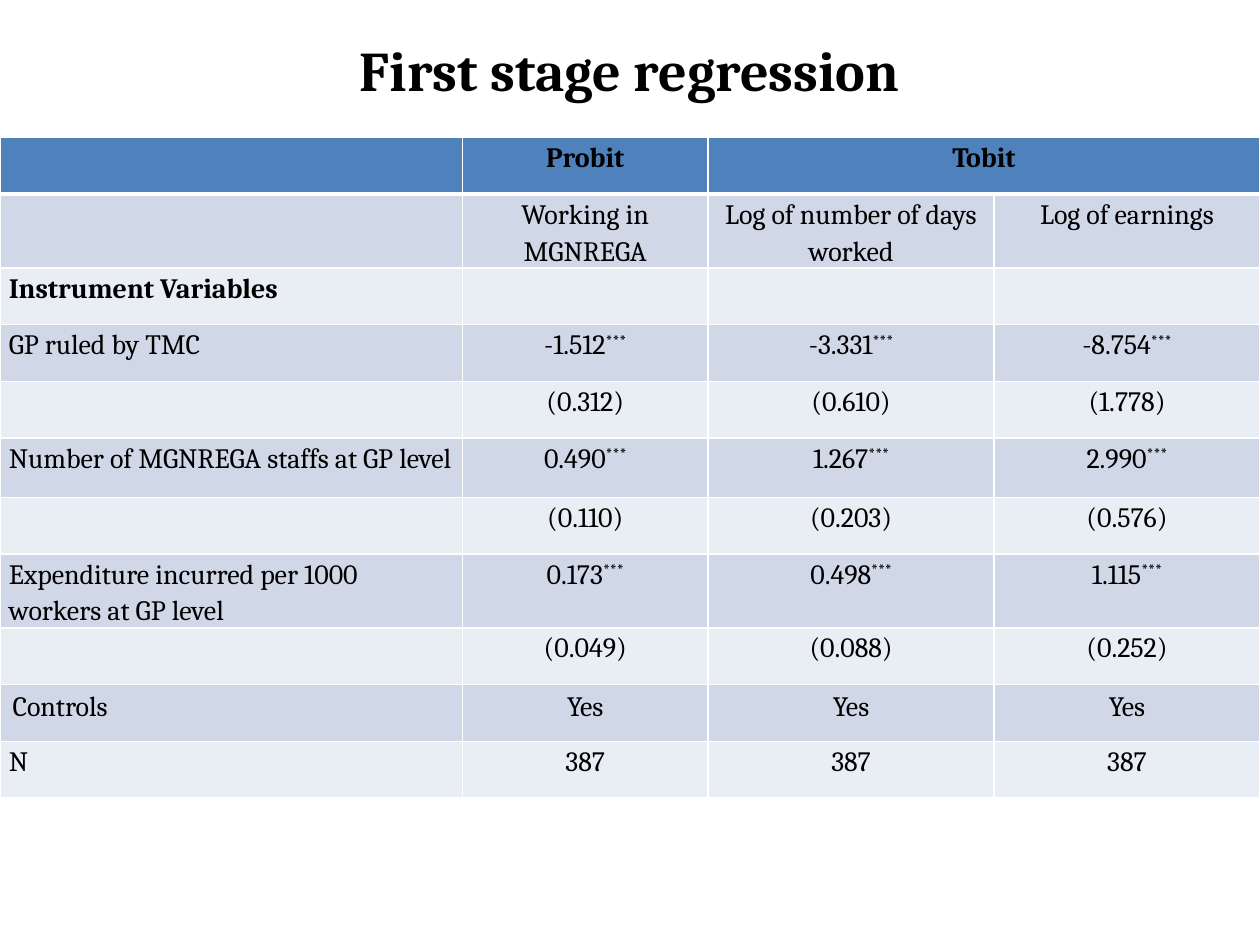
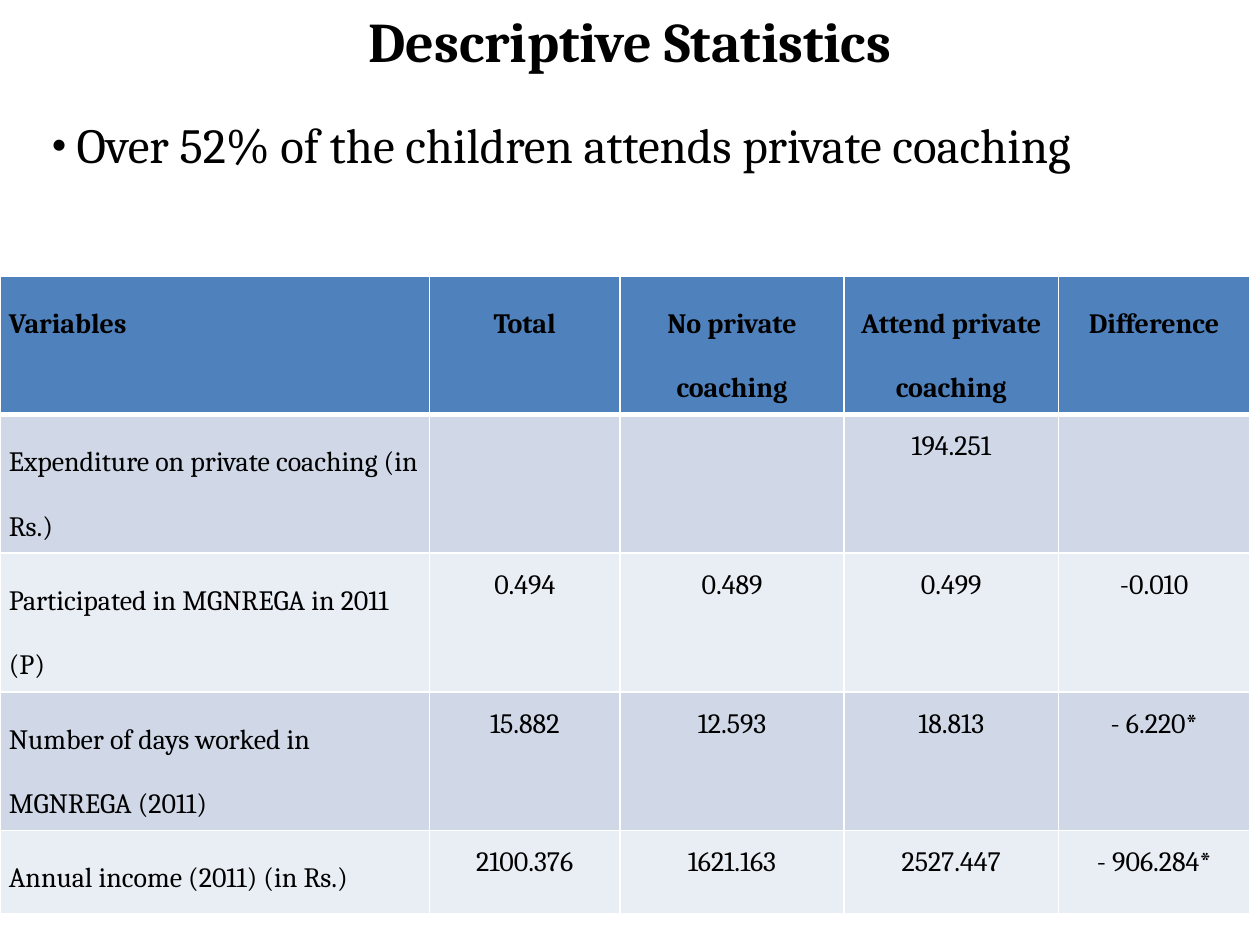
from lxml import etree
from pptx import Presentation
from pptx.dml.color import RGBColor
from pptx.enum.text import MSO_ANCHOR as Anchor, PP_ALIGN as Align
from pptx.oxml.ns import qn
from pptx.util import Inches, Pt

BLACK = RGBColor(0x00, 0x00, 0x00)
HEADER_BLUE = RGBColor(0x4F, 0x81, 0xBD)
BAND_DARK = RGBColor(0xD0, 0xD8, 0xE8)
BAND_LIGHT = RGBColor(0xE9, 0xED, 0xF4)
FONT = "Cambria"
TITLE_ONLY = 5
SUPERSCRIPT = "30000"

STATISTICS_BULLET = "Over 52% of the children attends private coaching"

REGRESSION_ROWS = [
    ["", "Probit", "Tobit", ""],
    ["", "Working in MGNREGA", "Log of number of days worked", "Log of earnings"],
    ["Instrument Variables", "", "", ""],
    ["GP ruled by TMC", "-1.512***", "-3.331***", "-8.754***"],
    ["", "(0.312)", "(0.610)", "(1.778)"],
    ["Number of MGNREGA staffs at GP level", "0.490***", "1.267***", "2.990***"],
    ["", "(0.110)", "(0.203)", "(0.576)"],
    ["Expenditure incurred per 1000 workers at GP level",
     "0.173***", "0.498***", "1.115***"],
    ["", "(0.049)", "(0.088)", "(0.252)"],
    ["Controls", "Yes", "Yes", "Yes"],
    ["N", "387", "387", "387"],
]
STATISTICS_ROWS = [
    ["Variables", "Total", "No private coaching", "Attend private coaching", "Difference"],
    ["Expenditure on private coaching (in Rs.)", "", "", "194.251", ""],
    ["Participated in MGNREGA in 2011 (P)", "0.494", "0.489", "0.499", "-0.010"],
    ["Number of days worked in MGNREGA (2011)", "15.882", "12.593", "18.813", "- 6.220*"],
    ["Annual income (2011) (in Rs.)", "2100.376", "1621.163", "2527.447", "- 906.284*"],
]

SLIDES = [
    {"title": "First stage regression", "title_at": (0.5, -0.08, 9, 1.25),
     "table_at": (0, 1.09), "rows": REGRESSION_ROWS,
     "widths": [3.67, 1.95, 2.27, 2.11],
     "heights": [0.45, 0.58, 0.45, 0.45, 0.45, 0.47, 0.45, 0.58, 0.45, 0.45, 0.45],
     "label_spacing": 1.15, "value_spacing": 1.15,
     "bold_labels": ["Instrument Variables"], "padded_labels": ["Controls"],
     "merge": ((0, 2), (0, 3))},
    {"title": "Descriptive Statistics", "title_at": (0, -0.23, 10, 1.09),
     "table_at": (0, 2.19), "rows": STATISTICS_ROWS,
     "widths": [3.41, 1.51, 1.78, 1.7, 1.52],
     "heights": [1.1, 1.1, 1.1, 1.1, 0.66],
     "label_spacing": 2.0, "value_spacing": 1.5,
     "bold_labels": [], "padded_labels": [],
     "merge": None, "bullet": STATISTICS_BULLET},
]


def add_span(para, text, size, bold=False):
    span = para.add_run()
    span.text = text
    for name, value in {"name": FONT, "size": Pt(size), "bold": bold}.items():
        setattr(span.font, name, value)
    span.font.color.rgb = BLACK
    return span


def set_borders(cell, row):
    """Draw white cell borders, with a thick rule below the header row."""
    points = {"lnL": 1, "lnR": 1, "lnT": 3 if row == 1 else 1, "lnB": 3 if row == 0 else 1}
    properties = cell._tc.get_or_add_tcPr()
    for index, (side, width) in enumerate(points.items()):
        line = etree.Element(qn(f"a:{side}"), w=str(Pt(width)))
        fill = etree.SubElement(line, qn("a:solidFill"))
        etree.SubElement(fill, qn("a:srgbClr"), val="FFFFFF")
        properties.insert(index, line)


deck = Presentation()
deck.slide_width, deck.slide_height = Inches(10), Inches(7.5)

for content in SLIDES:
    page = deck.slides.add_slide(deck.slide_layouts[TITLE_ONLY])
    title = page.shapes.title
    for side, length in zip(("left", "top", "width", "height"), content["title_at"]):
        setattr(title, side, Inches(length))
    title.text_frame.vertical_anchor = Anchor.MIDDLE
    heading = title.text_frame.paragraphs[0]
    heading.alignment = Align.CENTER
    add_span(heading, content["title"], 32, bold=True)

    rows, widths, heights = content["rows"], content["widths"], content["heights"]
    left, top = content["table_at"]
    table = page.shapes.add_table(
        len(rows), len(widths), Inches(left), Inches(top),
        Inches(sum(widths)), Inches(sum(heights))).table
    for column, width in zip(table.columns, widths):
        column.width = Inches(width)
    for table_row, height in zip(table.rows, heights):
        table_row.height = Inches(height)

    for row, texts in enumerate(rows):
        padded = texts[0] in content["padded_labels"]
        for column, text in enumerate(texts):
            cell = table.cell(row, column)
            side_margin, end_margin = (0.1, 0.05) if padded else (0.07, 0)
            cell.margin_left = cell.margin_right = Inches(side_margin)
            cell.margin_top = cell.margin_bottom = Inches(end_margin)
            cell.fill.solid()
            cell.fill.fore_color.rgb = (
                HEADER_BLUE if row == 0 else BAND_DARK if row % 2 else BAND_LIGHT)
            set_borders(cell, row)
            if not text:
                continue
            para = cell.text_frame.paragraphs[0]
            para.alignment = Align.CENTER if column else Align.LEFT
            is_label = row == 0 or column == 0
            spacing = content["label_spacing" if is_label else "value_spacing"]
            para.line_spacing = 1.0 if padded else spacing
            value, stars, _ = text.partition("***")
            add_span(para, value, 16, bold=row == 0 or text in content["bold_labels"])
            if stars:
                span = add_span(para, stars, 16)
                span._r.get_or_add_rPr().set("baseline", SUPERSCRIPT)

    if content["merge"]:
        first, last = content["merge"]
        table.cell(*first).merge(table.cell(*last))

    if "bullet" in content:
        box = page.shapes.add_textbox(Inches(0.31), Inches(0.86), Inches(9.45), Inches(0.57))
        box.text_frame.word_wrap = True
        para = box.text_frame.paragraphs[0]
        properties = para._p.get_or_add_pPr()
        properties.set("marL", str(Inches(0.2)))
        properties.set("indent", str(-Inches(0.2)))
        etree.SubElement(properties, qn("a:buSzPct"), val="64000")
        etree.SubElement(properties, qn("a:buFont"), typeface="Calibri")
        etree.SubElement(properties, qn("a:buChar"), char="•")
        add_span(para, content["bullet"], 28)

deck.save("out.pptx")
